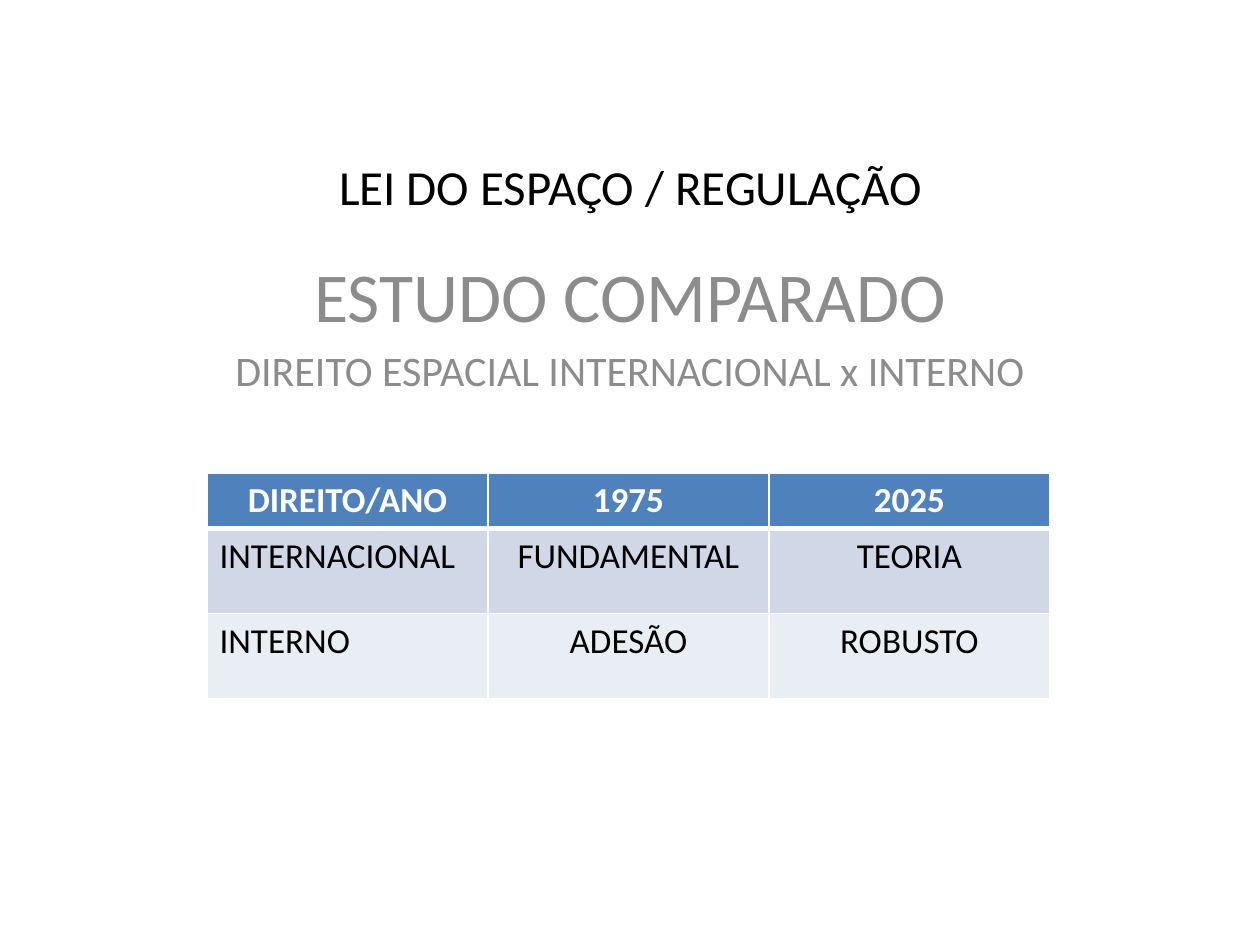
from dataclasses import dataclass

from lxml.etree import SubElement
from pptx import Presentation
from pptx.dml.color import RGBColor
from pptx.enum.text import MSO_ANCHOR as Anchor, MSO_AUTO_SIZE as AutoSize, PP_ALIGN as Align
from pptx.oxml.ns import qn
from pptx.util import Emu, Pt

PX = 914400 // 126  # EMU per px


@dataclass(frozen=True)
class Theme:
    font: str = "Calibri"
    black: str = "000000"
    white: str = "FFFFFF"
    grey: str = "8C8C8C"
    header: str = "4F81BD"
    bands: tuple = ("D0D8E8", "E9EDF4")
    title_size: int = 28
    heading_size: int = 40
    subheading_size: int = 24
    cell_size: int = 20
    thin: int = 1
    thick: int = 3


@dataclass(frozen=True)
class Box:
    left: int
    top: int
    width: int
    height: int

    def emu(self) -> list:
        return [Emu(v * PX) for v in (self.left, self.top, self.width, self.height)]


@dataclass(frozen=True)
class Line:
    text: str
    size: int
    color: str
    align: Align = Align.CENTER
    bold: bool = False
    space_before: float = 0


THEME = Theme()
TITLE_BOX = Box(95, 137, 1071, 98)
SUBTITLE_BOX = Box(189, 246, 882, 530)
TABLE_BOX = Box(207, 473, 843, 225)
ROW_HEIGHTS = (54, 85, 85)

ROWS = (
    ("DIREITO/ANO", "1975", "2025"),
    ("INTERNACIONAL", "FUNDAMENTAL", "TEORIA"),
    ("INTERNO", "ADESÃO", "ROBUSTO"),
)


def write_lines(tf, lines: list) -> None:
    for i, line in enumerate(lines):
        p = tf.paragraphs[0] if i == 0 else tf.add_paragraph()
        p.alignment = line.align
        p.space_before = Pt(line.space_before)
        r = p.add_run()
        r.text = line.text
        font_format = {"name": THEME.font, "size": Pt(line.size), "bold": line.bold}
        for name, value in font_format.items():
            setattr(r.font, name, value)
        r.font.color.rgb = RGBColor.from_string(line.color)


def fill_placeholder(sp, box: Box, anchor: Anchor, lines: list) -> None:
    sp.left, sp.top, sp.width, sp.height = box.emu()
    tf = sp.text_frame
    frame_format = {"word_wrap": True, "auto_size": AutoSize.NONE, "vertical_anchor": anchor}
    for name, value in frame_format.items():
        setattr(tf, name, value)
    write_lines(tf, lines)


def set_borders(cell, widths: dict) -> None:
    """Draw the white cell borders; call before the fill, which must follow them."""
    tc_pr = cell._tc.get_or_add_tcPr()
    for side, width in widths.items():
        ln = SubElement(tc_pr, qn(f"a:ln{side}"), w=str(Pt(width)))
        SubElement(SubElement(ln, qn("a:solidFill")), qn("a:srgbClr"), val=THEME.white)


def add_comparison_table(s) -> None:
    table = s.shapes.add_table(len(ROWS), len(ROWS[0]), *TABLE_BOX.emu()).table
    for column in table.columns:
        column.width = Emu(TABLE_BOX.width // len(ROWS[0]) * PX)
    for i, (texts, height) in enumerate(zip(ROWS, ROW_HEIGHTS)):
        table.rows[i].height = Emu(height * PX)
        is_header = i == 0
        fill = THEME.header if is_header else THEME.bands[i - 1]
        color = THEME.white if is_header else THEME.black
        widths = {
            "L": THEME.thin,
            "R": THEME.thin,
            "T": THEME.thick if i == 1 else THEME.thin,
            "B": THEME.thick if is_header else THEME.thin,
        }
        for j, text in enumerate(texts):
            cell = table.cell(i, j)
            set_borders(cell, widths)
            cell.fill.solid()
            cell.fill.fore_color.rgb = RGBColor.from_string(fill)
            align = Align.CENTER if is_header or j else Align.LEFT
            write_lines(cell.text_frame, [Line(text, THEME.cell_size, color, align, is_header)])


def main() -> None:
    prs = Presentation()
    prs.slide_width, prs.slide_height = Emu(1260 * PX), Emu(945 * PX)
    s = prs.slides.add_slide(prs.slide_layouts[0])

    # Title and subtitle
    fill_placeholder(s.shapes.title, TITLE_BOX, Anchor.MIDDLE, [
        Line("LEI DO ESPAÇO / REGULAÇÃO", THEME.title_size, THEME.black),
    ])
    fill_placeholder(s.placeholders[1], SUBTITLE_BOX, Anchor.TOP, [
        Line("ESTUDO COMPARADO", THEME.heading_size, THEME.grey, space_before=8),
        Line("DIREITO ESPACIAL INTERNACIONAL x INTERNO", THEME.subheading_size, THEME.grey,
             space_before=4.8),
    ])

    # Comparison of law by year
    add_comparison_table(s)

    prs.save("out.pptx")


if __name__ == "__main__":
    main()
